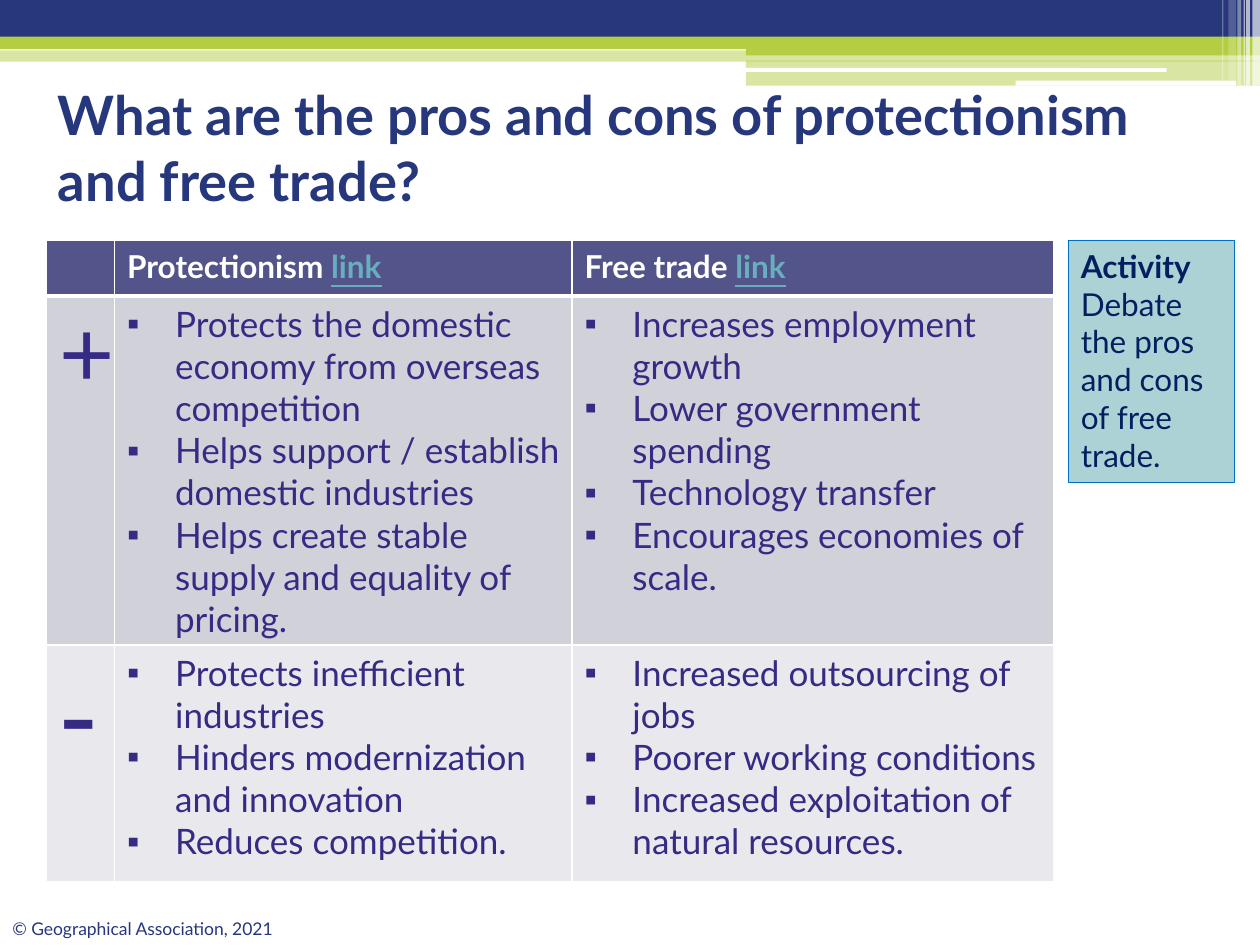
from dataclasses import dataclass
from lxml.etree import SubElement
from pptx import Presentation
from pptx.dml.color import RGBColor
from pptx.enum.shapes import MSO_SHAPE
from pptx.enum.text import MSO_ANCHOR, MSO_AUTO_SIZE, PP_ALIGN
from pptx.oxml.ns import qn
from pptx.util import Inches, Pt


@dataclass(frozen=True)
class Theme:
    font: str = "Lato"
    symbol_font: str = "Arial"
    navy: str = "26377C"
    lime: str = "B4CE44"
    white: str = "FFFFFF"
    header: str = "53548A"
    link: str = "67AFBD"
    body: str = "352B84"
    plus_row: str = "D1D1DA"
    minus_row: str = "E9E9ED"
    note: str = "ADD2D6"
    note_line: str = "0070C0"
    note_text: str = "002060"
    title_size: int = 31
    body_size: int = 20
    label_size: int = 18
    footer_size: int = 10
    plus_size: int = 54
    minus_size: int = 66


class SlideBuilder:
    def __init__(self, prs, theme):
        self.theme = theme
        self.s = prs.slides.add_slide(prs.slide_layouts[5])

    def style(self, font, size, color, bold=False, name=None):
        font.name = name or self.theme.font
        font.size = Pt(size)
        font.bold = bold
        font.color.rgb = RGBColor.from_string(color)

    def box(self, left, top, width, height, color, alpha=100, line=None, kind=MSO_SHAPE.RECTANGLE):
        sp = self.s.shapes.add_shape(kind, Inches(left), Inches(top), Inches(width), Inches(height))
        sp.shadow.inherit = False
        sp.fill.solid()
        sp.fill.fore_color.rgb = RGBColor.from_string(color)
        if alpha < 100:
            clr = sp.fill._xPr.find(qn("a:solidFill"))[0]
            SubElement(clr, qn("a:alpha"), val=str(alpha * 1000))
        if line:
            sp.line.color.rgb = RGBColor.from_string(line)
            sp.line.width = Pt(0.75)
        else:
            sp.line.fill.background()
        return sp

    def title(self, text, left, top, width, height):
        sp = self.s.shapes.title
        sp.left, sp.top, sp.width, sp.height = map(Inches, (left, top, width, height))
        tf = sp.text_frame
        tf.text = text
        tf.auto_size = MSO_AUTO_SIZE.NONE
        tf.vertical_anchor = MSO_ANCHOR.MIDDLE
        p = tf.paragraphs[0]
        p.alignment = PP_ALIGN.LEFT
        self.style(p.runs[0].font, self.theme.title_size, self.theme.navy, True)

    def footer(self, text, left, top, width, height):
        sp = self.s.shapes.add_textbox(Inches(left), Inches(top), Inches(width), Inches(height))
        tf = sp.text_frame
        tf.word_wrap = True
        tf.text = text
        self.style(tf.paragraphs[0].runs[0].font, self.theme.footer_size, self.theme.navy)

    def note(self, heading, text, left, top, width, height):
        t = self.theme
        tf = self.box(left, top, width, height, t.note, line=t.note_line).text_frame
        tf.word_wrap = True
        tf.vertical_anchor = MSO_ANCHOR.TOP
        tf.text = f"{heading}\n{text}"
        for p, bold in zip(tf.paragraphs, (True, False)):
            p.alignment = PP_ALIGN.LEFT
            self.style(p.runs[0].font, t.label_size, t.note_text, bold)

    def table(self, left, top, cols, rows):
        frame = self.s.shapes.add_table(len(rows), len(cols), Inches(left), Inches(top),
                                        Inches(sum(cols)), Inches(sum(rows)))
        table = frame.table
        for col, width in zip(table.columns, cols):
            col.width = Inches(width)
        for row, height in zip(table.rows, rows):
            row.height = Inches(height)
        return table

    def cell(self, cell, fill, top=1, bottom=1):
        tcPr = cell._tc.get_or_add_tcPr()
        for side, width in (("L", 1), ("R", 1), ("T", top), ("B", bottom)):
            ln = SubElement(tcPr, qn(f"a:ln{side}"), w=str(Pt(width)))
            SubElement(SubElement(ln, qn("a:solidFill")), qn("a:srgbClr"), val=self.theme.white)
        cell.fill.solid()
        cell.fill.fore_color.rgb = RGBColor.from_string(fill)

    def heading(self, cell, text, link):
        t = self.theme
        p = cell.text_frame.paragraphs[0]
        for words, color in ((text, t.white), (link, t.link)):
            r = p.add_run()
            r.text = words
            self.style(r.font, t.label_size, color, True)
            r.font.underline = words == link

    def symbol(self, cell, text, size):
        cell.text_frame.text = text
        self.style(cell.text_frame.paragraphs[0].runs[0].font, size, self.theme.body,
                   name=self.theme.symbol_font)

    def bullets(self, cell, items):
        cell.margin_right = Inches(0.08)
        tf = cell.text_frame
        tf.text = "\n".join(items)
        for p in tf.paragraphs:
            pPr = p._p.get_or_add_pPr()
            pPr.set("marL", str(Inches(0.38)))
            pPr.set("indent", str(-Inches(0.38)))
            SubElement(pPr, qn("a:buFont"), typeface=self.theme.symbol_font)
            SubElement(pPr, qn("a:buChar"), char="▪")
            self.style(p.runs[0].font, self.theme.body_size, self.theme.body)


def main():
    prs = Presentation()
    prs.slide_width, prs.slide_height = Inches(10), Inches(7.5)
    t = Theme()
    b = SlideBuilder(prs, t)

    for left, top, width, height, color, alpha in (
        (0, 0.4, 10, 0.09, t.lime, 50),
        (0, 0, 10, 0.34, t.navy, 100),
        (0, 0.29, 10, 0.1, t.lime, 100),
        (5.92, 0.34, 4.08, 0.1, t.lime, 100),
        (5.92, 0.48, 4.08, 0.2, t.lime, 50),
    ):
        b.box(left, top, width, height, color, alpha)
    for left, top, width, height in ((5.91, 0.54, 3.35, 0.03), (8.06, 0.64, 1.75, 0.04)):
        b.box(left, top, width, height, t.white, kind=MSO_SHAPE.ROUNDED_RECTANGLE)
    for left, width, height, alpha in (
        (9.94, 0.06, 0.68, 65), (9.89, 0.03, 0.68, 65), (9.87, 0.01, 0.68, 60),
        (9.82, 0.03, 0.68, 40), (9.75, 0.06, 0.64, 20), (9.7, 0.01, 0.64, 30),
    ):
        b.box(left, 0, width, height, t.white, alpha)

    b.footer("© Geographical Association, 2021", 0, 7.24, 2.87, 0.27)
    b.title("What are the pros and cons of protectionism and free trade?", 0.36, 0.61, 9, 1.11)

    table = b.table(0.37, 1.91, (0.54, 3.63, 3.82), (0.44, 2.77, 1.88))
    for row, (fill, top, bottom) in enumerate((
        (t.header, 1, 3), (t.plus_row, 3, 1), (t.minus_row, 1, 1),
    )):
        for cell in table.rows[row].cells:
            b.cell(cell, fill, top, bottom)
    for col, text in enumerate(("Protectionism ", "Free trade "), 1):
        b.heading(table.cell(0, col), text, "link")
    for row, (sign, size, *lists) in enumerate((
        ("+", t.plus_size,
         ("Protects the domestic economy from overseas competition",
          "Helps support / establish domestic industries",
          "Helps create stable supply and equality of pricing."),
         ("Increases employment growth", "Lower government spending",
          "Technology transfer", "Encourages economies of scale.")),
        ("-", t.minus_size,
         ("Protects inefficient industries", "Hinders modernization and innovation",
          "Reduces competition."),
         ("Increased outsourcing of jobs", "Poorer working conditions",
          "Increased exploitation of natural resources.")),
    ), 1):
        b.symbol(table.cell(row, 0), sign, size)
        for col, items in enumerate(lists, 1):
            b.bullets(table.cell(row, col), items)

    b.note("Activity", "Debate the pros and cons of free trade.", 8.48, 1.91, 1.32, 1.92)
    prs.save("out.pptx")


if __name__ == "__main__":
    main()
